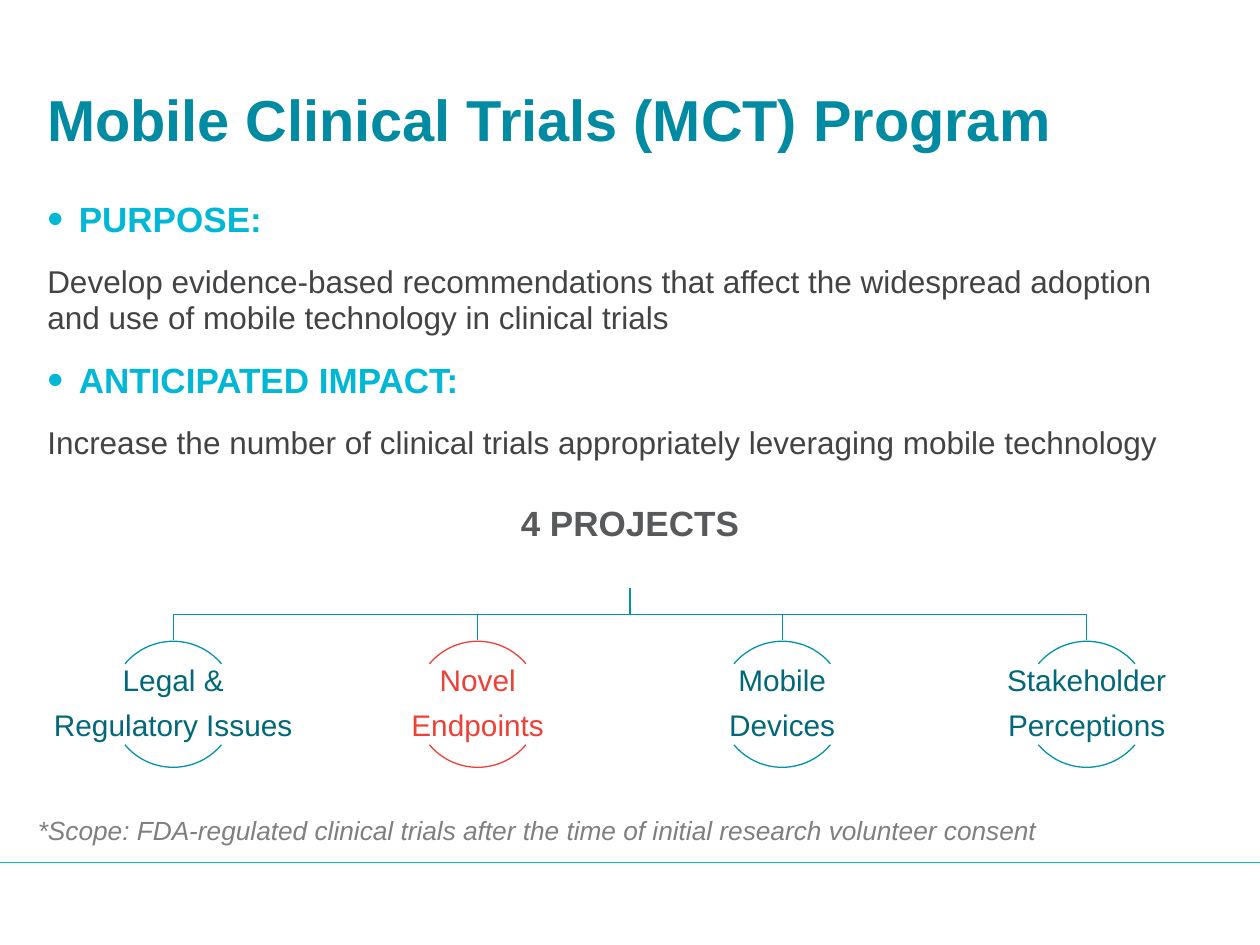
from dataclasses import dataclass

from lxml import etree
from pptx import Presentation
from pptx.dml.color import RGBColor
from pptx.enum import shapes, text
from pptx.oxml import ns
from pptx.util import Pt


@dataclass(frozen=True)
class Theme:
    font: str = "Arial"
    title: str = "008BA2"
    heading: str = "00B7D5"
    body: str = "424344"
    root: str = "58595B"
    branch: str = "0093AB"
    label: str = "006879"
    highlight: str = "EE4036"
    note: str = "7F7F7F"
    title_size: float = 33
    heading_size: float = 20
    body_size: float = 18
    label_size: float = 17
    note_size: float = 15
    line_width: float = 0.75


THEME = Theme()

SECTIONS = [
    ("PURPOSE:", "Develop evidence-based recommendations that affect the "
                 "widespread adoption and use of mobile technology in clinical trials"),
    ("ANTICIPATED IMPACT:", "Increase the number of clinical trials appropriately "
                            "leveraging mobile technology"),
]
PROJECTS = [
    (["Legal &", "Regulatory Issues"], False),
    (["Novel", "Endpoints"], True),
    (["Mobile", "Devices"], False),
    (["Stakeholder", "Perceptions"], False),
]
NOTE = "*Scope: FDA-regulated clinical trials after the time of initial research volunteer consent"


def style_font(para, size, color, bold=False, italic=False):
    font = para.font
    font.name, font.size = THEME.font, Pt(size)
    font.bold, font.italic = bold, italic
    font.color.rgb = RGBColor.from_string(color)


def style_line(shape, color):
    shape.line.color.rgb = RGBColor.from_string(color)
    shape.line.width = Pt(THEME.line_width)


def set_frame(frame, inset=0, anchor=text.MSO_ANCHOR.TOP):
    frame.word_wrap = True
    frame.vertical_anchor = anchor
    frame.margin_left = frame.margin_right = Pt(inset)
    frame.margin_top = frame.margin_bottom = Pt(inset)


def add_text_box(page, left, top, width, height, inset=0, anchor=text.MSO_ANCHOR.TOP):
    box = page.shapes.add_textbox(Pt(left), Pt(top), Pt(width), Pt(height))
    set_frame(box.text_frame, inset, anchor)
    return box.text_frame


def next_paragraph(frame, index):
    return frame.add_paragraph() if index else frame.paragraphs[0]


def add_bullet(para):
    props = para._p.get_or_add_pPr()
    props.set("marL", str(Pt(18)))
    props.set("indent", str(-Pt(18)))
    etree.SubElement(props, ns.qn("a:buSzPct"), val="130000")
    etree.SubElement(props, ns.qn("a:buFont"), typeface=THEME.font)
    etree.SubElement(props, ns.qn("a:buChar"), char="•")


def place_title(page, left, top, width, height):
    title = page.shapes.title
    title.left, title.top, title.width, title.height = map(Pt, (left, top, width, height))
    set_frame(title.text_frame, anchor=text.MSO_ANCHOR.MIDDLE)
    para = title.text_frame.paragraphs[0]
    para.text = "Mobile Clinical Trials (MCT) Program"
    para.alignment = text.PP_ALIGN.LEFT
    style_font(para, THEME.title_size, THEME.title, bold=True)


def add_sections(page, left, top, width, height):
    frame = add_text_box(page, left, top, width, height)
    lines = [(line, is_heading) for section in SECTIONS
             for line, is_heading in zip(section, (True, False))]
    for index, (line, is_heading) in enumerate(lines):
        para = next_paragraph(frame, index)
        para.text = line
        para.line_spacing = 0.95
        if index:
            para.space_before = Pt(14)
        if is_heading:
            add_bullet(para)
            style_font(para, THEME.heading_size, THEME.heading, bold=True)
        else:
            style_font(para, THEME.body_size, THEME.body)


def add_label(page, center, top, lines, size, color, bold=False):
    frame = add_text_box(page, center - 72, top, 144, 46, 0.75, text.MSO_ANCHOR.MIDDLE)
    for index, line in enumerate(lines):
        para = next_paragraph(frame, index)
        para.text = line
        para.alignment = text.PP_ALIGN.CENTER
        para.line_spacing = 0.9
        para.space_after = Pt(7)
        style_font(para, size, color, bold)


def add_branch(page, root, center, top, height):
    middle = top + height / 2
    builder = page.shapes.build_freeform(Pt(root), Pt(top))
    corners = [(root, middle), (center, middle), (center, top + height)]
    builder.add_line_segments([(Pt(x), Pt(y)) for x, y in corners], close=False)
    branch = builder.convert_to_shape()
    branch.fill.background()
    branch.shadow.inherit = False
    style_line(branch, THEME.branch)


def add_project(page, center, top, lines, is_highlighted):
    """Draw a label between the upper and lower arcs of a circle."""
    diameter = 72
    for start, end in [(220, 320), (40, 140)]:
        arc = page.shapes.add_shape(shapes.MSO_SHAPE.ARC, Pt(center - diameter / 2),
                                    Pt(top), Pt(diameter), Pt(diameter))
        # Angles are stored in 60000ths of a degree, adjustments in 100000ths.
        arc.adjustments[0], arc.adjustments[1] = start * 0.6, end * 0.6
        arc.fill.background()
        arc.shadow.inherit = False
        style_line(arc, THEME.highlight if is_highlighted else THEME.branch)
    add_label(page, center, top + 13, lines, THEME.label_size,
              THEME.highlight if is_highlighted else THEME.label)


def add_project_tree(page, left, top, width):
    pitch = (width - 144) / (len(PROJECTS) - 1)
    centers = [left + 72 + pitch * index for index in range(len(PROJECTS))]
    root = left + width / 2
    for center in reversed(centers):
        add_branch(page, root, center, top + 59, 30)
    add_label(page, root, top, ["4 PROJECTS"], THEME.heading_size, THEME.root, bold=True)
    for center, (lines, is_highlighted) in zip(centers, PROJECTS):
        add_project(page, center, top + 89.5, lines, is_highlighted)


def add_footer(page, left, top, width, height):
    rule = page.shapes.add_connector(shapes.MSO_CONNECTOR.STRAIGHT,
                                     Pt(0), Pt(493), Pt(720), Pt(493))
    style_line(rule, THEME.heading)
    etree.SubElement(rule._element.spPr, ns.qn("a:effectLst"))
    frame = add_text_box(page, left, top, width, height, inset=3.6)
    frame.margin_left = frame.margin_right = Pt(7.2)
    para = frame.paragraphs[0]
    para.text = NOTE
    style_font(para, THEME.note_size, THEME.note, italic=True)


def main():
    deck = Presentation()
    deck.slide_width, deck.slide_height = Pt(720), Pt(540)
    page = deck.slides.add_slide(deck.slide_layouts[5])
    place_title(page, 27, 37.5, 666, 60.5)
    add_sections(page, 27, 114.5, 666, 150)
    add_project_tree(page, 27, 277, 666)
    add_footer(page, 14.5, 461.5, 615, 25)
    deck.save("out.pptx")


if __name__ == "__main__":
    main()
